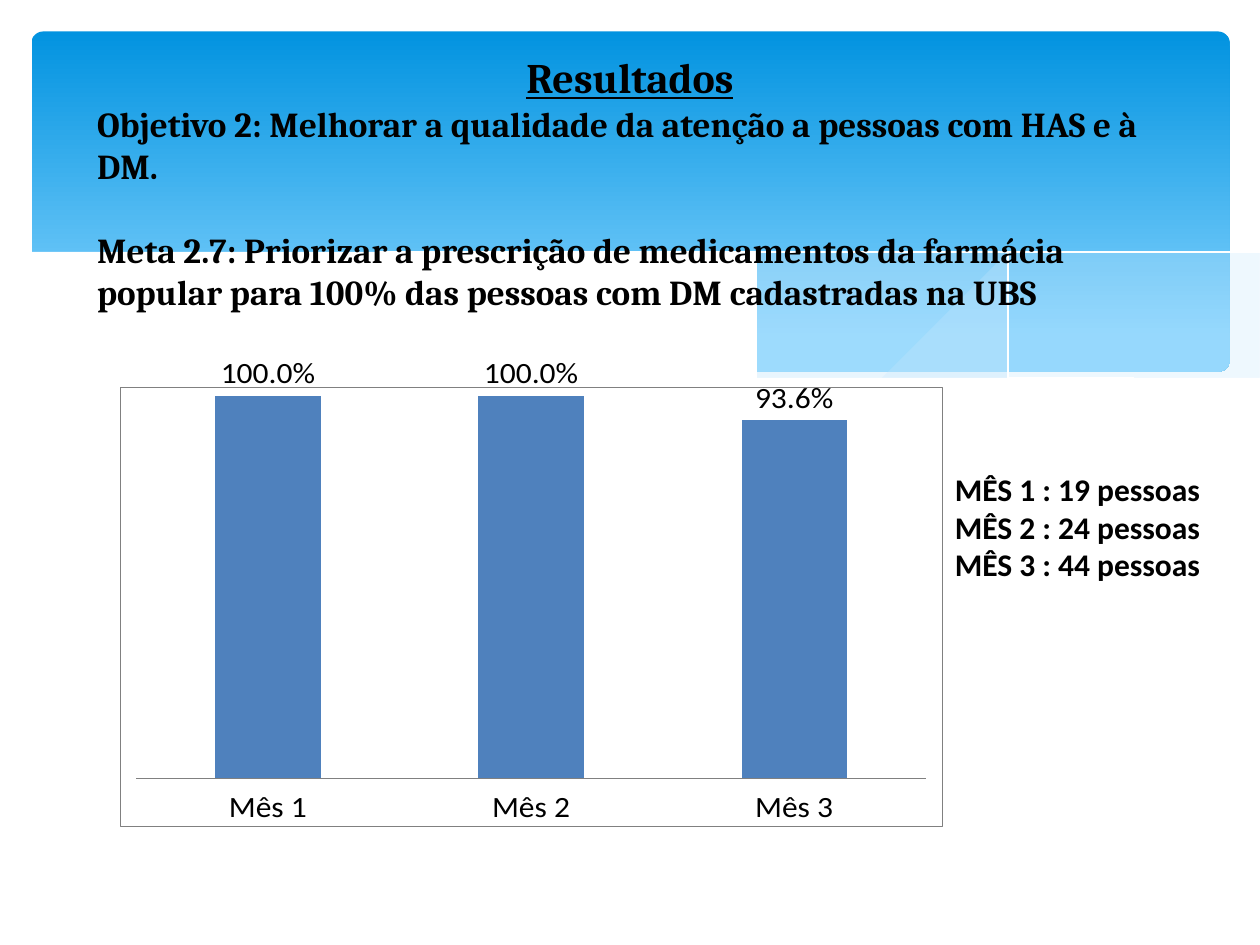
from lxml.etree import SubElement
from pptx import Presentation
from pptx.chart.data import CategoryChartData
from pptx.dml.color import RGBColor
from pptx.enum.chart import XL_CHART_TYPE, XL_LABEL_POSITION, XL_TICK_LABEL_POSITION, XL_TICK_MARK
from pptx.enum.shapes import MSO_SHAPE
from pptx.enum.text import MSO_ANCHOR, MSO_AUTO_SIZE, PP_ALIGN
from pptx.oxml import parse_xml
from pptx.oxml.ns import nsdecls, qn
from pptx.util import Inches, Pt

BLACK = RGBColor(0x00, 0x00, 0x00)
WHITE = RGBColor(0xFF, 0xFF, 0xFF)
GRAY = RGBColor(0x80, 0x80, 0x80)
BAR_BLUE = RGBColor(0x4F, 0x81, 0xBD)
DEEP_BLUE = RGBColor(0x02, 0x93, 0xE0)
SKY_BLUE = RGBColor(0x83, 0xD3, 0xFE)
PALE_BLUE = RGBColor(0xC6, 0xE7, 0xFC)

RIGHT_WAVE_TOP = [(9.76, 2), (9.35, 2.07), (8.61, 2.23), (7.79, 2.42), (7.06, 2.57), (6.61, 2.65)]
RIGHT_WAVE_BOTTOM = [(6.61, 2.65), (7.05, 2.71), (7.57, 2.76), (8.03, 2.78), (8.54, 2.76),
                     (9.05, 2.69), (9.42, 2.59), (9.76, 2.47)]
LONG_WAVE_TOP = [(8.93, 2.73), (8.37, 2.65), (7.75, 2.54), (7.06, 2.4), (6.29, 2.22), (5.69, 2.08),
                 (5.14, 1.98), (4.65, 1.91), (4.2, 1.87), (3.61, 1.85), (3.13, 1.88), (2.86, 1.91)]
LONG_WAVE_BOTTOM = [(2.86, 1.91), (3.42, 1.99), (4.04, 2.11), (4.49, 2.22), (5.3, 2.4), (6.01, 2.55),
                    (6.65, 2.66), (7.22, 2.74), (7.73, 2.77), (8.18, 2.78), (8.57, 2.77), (8.93, 2.73)]
FALLING_LINE = [(3.09, 1.95), (3.44, 1.9), (4.01, 1.87), (4.69, 1.89), (5.33, 1.94), (6.08, 2.04),
                (6.95, 2.19), (7.95, 2.41), (9.07, 2.72)]
RISING_LINE = [(6.13, 2.57), (6.72, 2.41), (7.48, 2.23), (8.36, 2.04), (8.95, 1.94), (9.38, 1.88), (9.75, 1.85)]
PAGE_EDGE = [(9.77, 2.46), (9.4, 2.59), (8.99, 2.69), (8.5, 2.75), (8.09, 2.77), (7.61, 2.75), (6.88, 2.68),
             (6.03, 2.54), (5.29, 2.39), (4.47, 2.2), (3.65, 2.02), (2.92, 1.9), (2.3, 1.85), (1.77, 1.84),
             (1.32, 1.86), (0.95, 1.91), (0.59, 1.99), (0.36, 2.07), (0.23, 2.13)]


def smooth(knots, steps=6):
    """Return points on a Catmull-Rom curve through the knots."""
    padded = [knots[0], *knots, knots[-1]]
    points = []
    for a, b, c, d in zip(padded, padded[1:], padded[2:], padded[3:]):
        for step in range(steps):
            t = step / steps
            points.append(tuple(
                q + t * ((r - p) + t * ((2 * p - 5 * q + 4 * r - s) + t * (3 * q - p - 3 * r + s))) / 2
                for p, q, r, s in zip(a, b, c, d)))
    return points + [knots[-1]]


def write_text(frame, text, font="Calibri", size=18, underline=False, align=PP_ALIGN.LEFT, before=0, first=False):
    """Write one bold paragraph into a text frame."""
    para = frame.paragraphs[0] if first else frame.add_paragraph()
    para.alignment = align
    para.space_before = Pt(before)
    span = para.add_run()
    span.text = text
    span.font.name, span.font.size = font, Pt(size)
    span.font.bold, span.font.underline = True, underline
    span.font.color.rgb = BLACK


class SlideBuilder:
    """Hold the style and the current slide."""

    heading_font = "Cambria"
    body_font = "Calibri"

    def __init__(self, deck):
        self.page = deck.slides.add_slide(deck.slide_layouts[5])

    def banner(self, left, top, width, height):
        """Draw the rounded gradient banner."""
        box = self.page.shapes.add_shape(
            MSO_SHAPE.ROUNDED_RECTANGLE, Inches(left), Inches(top), Inches(width), Inches(height))
        box.adjustments[0] = 0.034
        box.shadow.inherit = False
        box.line.fill.background()
        box.fill.gradient()
        box.fill.gradient_angle = 270
        for stop, color, position in zip(box.fill.gradient_stops, (DEEP_BLUE, SKY_BLUE), (0, 0.9)):
            stop.color.rgb, stop.position = color, position

    def curve(self, points, fill=None, opacity=100):
        """Draw a filled area, or a white hairline when there is no fill."""
        builder = self.page.shapes.build_freeform(*points[0], scale=Inches(1))
        builder.add_line_segments(points[1:], close=fill is not None)
        shape = builder.convert_to_shape()
        shape.shadow.inherit = False
        if fill is None:
            shape.fill.background()
            shape.line.color.rgb, shape.line.width = WHITE, 0
            return
        shape.line.fill.background()
        shape.fill.solid()
        shape.fill.fore_color.rgb = fill
        if opacity < 100:
            color = shape._element.spPr.find(qn("a:solidFill"))[0]
            SubElement(color, qn("a:alpha")).set("val", str(opacity * 1000))

    def title(self, left, top, width, height, heading, goals):
        """Place the heading and the goals in the title placeholder."""
        box = self.page.shapes.title
        box.left, box.top, box.width, box.height = map(Inches, (left, top, width, height))
        self.page.shapes._spTree.append(box._element)
        frame = box.text_frame
        frame.word_wrap, frame.auto_size = True, MSO_AUTO_SIZE.NONE
        frame.vertical_anchor = MSO_ANCHOR.TOP
        write_text(frame, heading, font=self.heading_font, size=24, underline=True,
                   align=PP_ALIGN.CENTER, first=True)
        for index, goal in enumerate(goals):
            write_text(frame, goal, font=self.heading_font, size=20, before=24 * index)

    def text(self, left, top, width, height, lines):
        """Add a text box with one paragraph per line."""
        box = self.page.shapes.add_textbox(Inches(left), Inches(top), Inches(width), Inches(height))
        box.text_frame.word_wrap = True
        for index, line in enumerate(lines):
            write_text(box.text_frame, line, font=self.body_font, first=index == 0)

    def chart(self, left, top, width, height, categories, values):
        """Add the column chart with percentage labels."""
        data = CategoryChartData(number_format="0.0%")
        data.categories = categories
        data.add_series("Series 1", values)
        chart = self.page.shapes.add_chart(
            XL_CHART_TYPE.COLUMN_CLUSTERED, Inches(left), Inches(top), Inches(width), Inches(height), data).chart
        chart.has_legend = chart.has_title = False
        chart.font.name, chart.font.size, chart.font.color.rgb = self.body_font, Pt(10), BLACK
        months, scale = chart.category_axis, chart.value_axis
        months.major_tick_mark = XL_TICK_MARK.NONE
        months.tick_label_position = XL_TICK_LABEL_POSITION.LOW
        months.format.line.color.rgb, months.format.line.width = GRAY, Pt(0.25)
        scale.minimum_scale, scale.maximum_scale, scale.major_unit = 0, 1, 0.1
        scale.has_major_gridlines = scale.visible = False
        plot = chart.plots[0]
        plot.gap_width, plot.overlap, plot.vary_by_categories = 150, -25, False
        plot.series[0].format.fill.solid()
        plot.series[0].format.fill.fore_color.rgb = BAR_BLUE
        plot.has_data_labels = True
        labels = plot.data_labels
        labels.show_value, labels.position = True, XL_LABEL_POSITION.OUTSIDE_END
        labels.number_format, labels.number_format_is_linked = "0.0%", False
        for font in (months.tick_labels.font, labels.font):
            font.name, font.size, font.color.rgb = self.body_font, Pt(18), BLACK
        self.frame_chart(chart)

    def frame_chart(self, chart):
        """Set the plot position, white backgrounds and the thin border."""
        space = chart._chartSpace
        area = space.chart.plotArea
        for old in area.findall(qn("c:layout")):
            area.remove(old)
        sizes = "".join(f'<c:{name} val="{value}"/>' for name, value in
                        (("x", 0.02), ("y", 0.02), ("w", 0.96), ("h", 0.87)))
        area.insert(0, parse_xml(
            f'<c:layout {nsdecls("c")}><c:manualLayout><c:layoutTarget val="inner"/>'
            f'<c:xMode val="edge"/><c:yMode val="edge"/>{sizes}</c:manualLayout></c:layout>'))
        white = f'<a:solidFill><a:srgbClr val="{WHITE}"/></a:solidFill>'
        border = f'<a:ln w="{Pt(0.25)}"><a:solidFill><a:srgbClr val="{GRAY}"/></a:solidFill></a:ln>'
        tag = f'<c:spPr {nsdecls("c", "a")}>{white}'
        area.append(parse_xml(f"{tag}<a:ln><a:noFill/></a:ln></c:spPr>"))
        space.find(qn("c:txPr")).addprevious(parse_xml(f"{tag}{border}</c:spPr>"))


def main():
    """Build the results slide and save the deck."""
    deck = Presentation()
    deck.slide_width, deck.slide_height = Inches(10), Inches(7.5)
    slide = SlideBuilder(deck)
    slide.banner(0.25, 0.25, 9.51, 2.7)
    slide.curve(smooth(RIGHT_WAVE_TOP) + smooth(RIGHT_WAVE_BOTTOM), PALE_BLUE, opacity=29)
    slide.curve(smooth(LONG_WAVE_TOP) + smooth(LONG_WAVE_BOTTOM), PALE_BLUE, opacity=40)
    slide.curve(smooth(FALLING_LINE))
    slide.curve(smooth(RISING_LINE))
    slide.curve(smooth(PAGE_EDGE) + [(0.23, 3.29), (9.77, 3.29)], WHITE)
    slide.title(0.67, 0.36, 8.66, 2.19, "Resultados", [
        "Objetivo 2: Melhorar a qualidade da atenção a pessoas com HAS e à DM.",
        "Meta 2.7: Priorizar a prescrição de medicamentos da farmácia popular "
        "para 100% das pessoas com DM cadastradas na UBS"])
    slide.text(7.48, 3.68, 2.52, 1.01,
               [f"MÊS {month} : {people} pessoas" for month, people in enumerate((19, 24, 44), start=1)])
    slide.chart(0.95, 2.82, 6.53, 3.74, ["Mês 1", "Mês 2", "Mês 3"], [1, 1, 0.936])
    deck.save("out.pptx")


if __name__ == "__main__":
    main()
